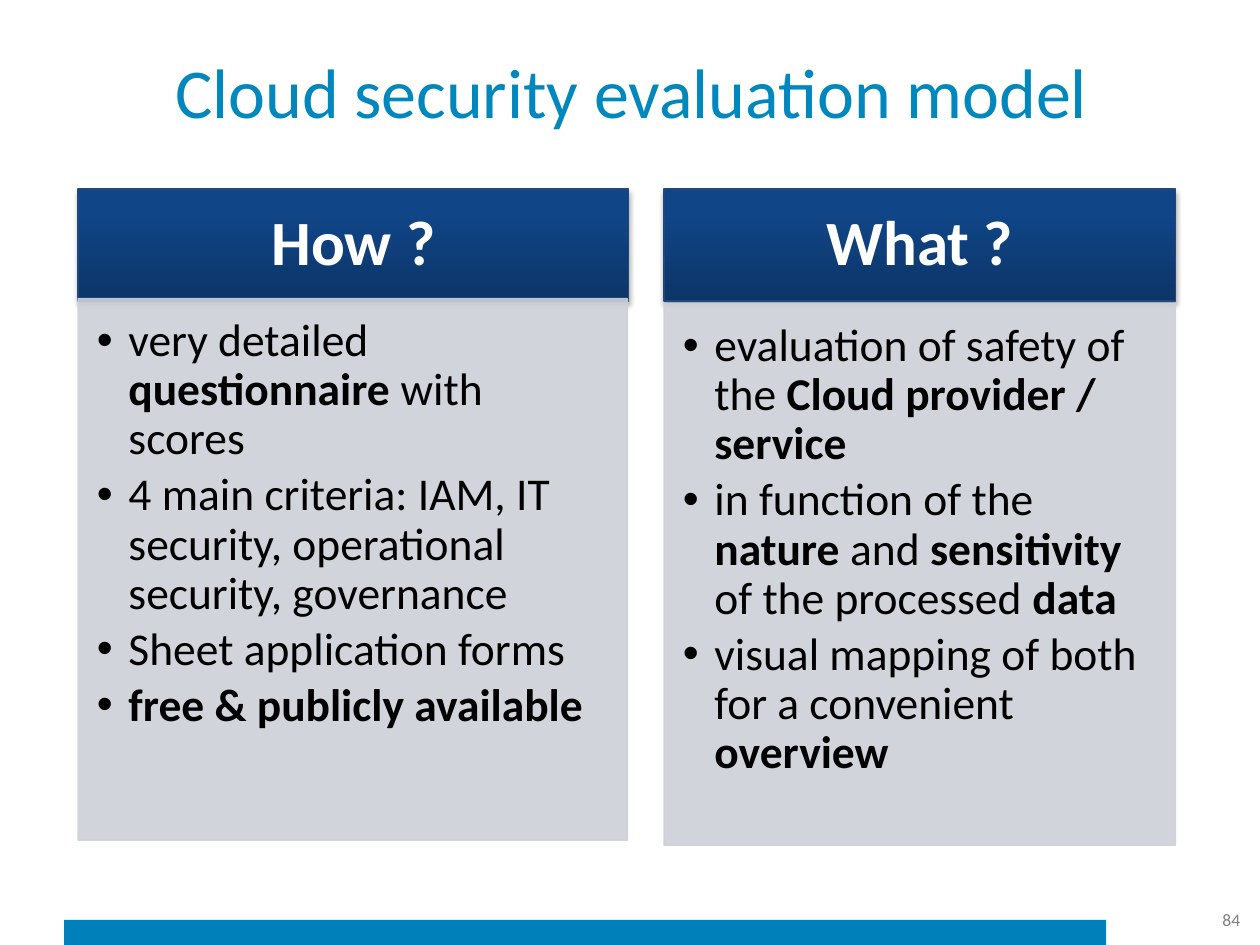
from copy import deepcopy
from dataclasses import dataclass

from lxml import etree
from pptx import Presentation
from pptx.dml.color import RGBColor
from pptx.enum.shapes import MSO_SHAPE
from pptx.enum.text import MSO_ANCHOR, PP_ALIGN
from pptx.oxml import parse_xml
from pptx.oxml.ns import nsdecls, qn
from pptx.util import Inches, Pt

RECT = MSO_SHAPE.RECTANGLE
TOP, MIDDLE = MSO_ANCHOR.TOP, MSO_ANCHOR.MIDDLE
LEFT, CENTER, RIGHT = PP_ALIGN.LEFT, PP_ALIGN.CENTER, PP_ALIGN.RIGHT


@dataclass(frozen=True)
class Theme:
    font: str = "Calibri"
    bar: str = "0080BB"
    title: str = "0087BE"
    number: str = "808080"
    header: str = "FFFFFF"
    header_line: str = "1F497D"
    gradient: tuple = ((0, "0D3568"), (0.8, "104587"), (1, "0E458A"))
    panel: str = "CDD0D7"
    body: str = "000000"
    title_size: int = 40
    header_size: int = 36
    body_size: int = 26
    number_size: int = 10


class SlideBuilder:
    def __init__(self, slide, theme):
        self.s = slide
        self.theme = theme

    def rect(self, box, line=None):
        sp = self.s.shapes.add_shape(RECT, *map(Inches, box))
        sp.shadow.inherit = False
        if line:
            sp.line.color.rgb = RGBColor.from_string(line)
            sp.line.width = Pt(0.75)
        else:
            sp.line.fill.background()
        return sp

    def solid(self, sp, color):
        sp.fill.solid()
        sp.fill.fore_color.rgb = RGBColor.from_string(color)

    def frame(self, sp, anchor, insets=(0.1, 0.05, 0.1, 0.05)):
        tf = sp.text_frame
        sides = ("margin_left", "margin_top", "margin_right", "margin_bottom")
        values = dict(zip(sides, map(Inches, insets)))
        values.update(word_wrap=True, vertical_anchor=anchor)
        for name, value in values.items():
            setattr(tf, name, value)
        return tf

    def run(self, p, text, size, color, bold=False):
        r = p.add_run()
        r.text = text
        values = {"name": self.theme.font, "size": Pt(size), "bold": bold}
        for name, value in values.items():
            setattr(r.font, name, value)
        r.font.color.rgb = RGBColor.from_string(color)

    def label(self, box, text, size, color, align):
        sp = self.s.shapes.add_textbox(*map(Inches, box))
        p = self.frame(sp, MIDDLE).paragraphs[0]
        p.alignment = align
        self.run(p, text, size, color)

    def bar(self, box):
        self.solid(self.rect(box), self.theme.bar)

    def header(self, box, text):
        t = self.theme
        sp = self.rect(box, t.header_line)
        sp.fill.gradient()
        sp.fill.gradient_angle = 90
        first = sp.fill.gradient_stops[0]._gs
        first.addnext(deepcopy(first))
        for stop, (position, color) in zip(sp.fill.gradient_stops, t.gradient):
            stop.position = position
            stop.color.rgb = RGBColor.from_string(color)
        sp._element.spPr.find(qn("a:effectLst")).append(parse_xml(
            f'<a:outerShdw {nsdecls("a")} blurRad="{Pt(3.1)}" dist="{Pt(1.8)}" '
            'dir="5400000" rotWithShape="0"><a:srgbClr val="000000">'
            '<a:alpha val="35000"/></a:srgbClr></a:outerShdw>'))
        p = self.frame(sp, MIDDLE, (0.28, 0.16, 0.28, 0.16)).paragraphs[0]
        p.alignment = CENTER
        p.line_spacing = 0.9
        self.run(p, text, t.header_size, t.header, True)

    def panel(self, box, items):
        """Draw a translucent panel; odd parts of each item are bold."""
        t = self.theme
        sp = self.rect(box, t.panel)
        self.solid(sp, t.panel)
        for color in sp._element.spPr.iter(qn("a:srgbClr")):
            etree.SubElement(color, qn("a:alpha"), val="90000")
        tf = self.frame(sp, TOP, (0.15, 0.15, 0.2, 0.23))
        for i, parts in enumerate(items):
            p = tf.add_paragraph() if i else tf.paragraphs[0]
            self.bullet(p)
            for j, text in enumerate(parts):
                if text:
                    self.run(p, text, t.body_size, t.body, j % 2 == 1)

    def bullet(self, p):
        pPr = p._p.get_or_add_pPr()
        pPr.set("marL", str(Inches(0.25)))
        pPr.set("indent", str(Inches(-0.25)))
        etree.SubElement(pPr, qn("a:buFont"), typeface="Arial")
        etree.SubElement(pPr, qn("a:buChar"), char="•")
        values = {"alignment": LEFT, "line_spacing": 0.9, "space_after": Pt(3.9)}
        for name, value in values.items():
            setattr(p, name, value)


# left, header width, panel width, panel top, heading, items
COLUMNS = (
    (5.27, 4.06, 4.06, 2.41, "What ?", (
        ("evaluation of safety of the ", "Cloud provider / service"),
        ("in function of the ", "nature", " and ", "sensitivity",
         " of the processed ", "data"),
        ("visual mapping of both for a convenient ", "overview"),
    )),
    (0.62, 4.37, 4.36, 2.37, "How ?", (
        ("very detailed ", "questionnaire", " with scores"),
        ("4 main criteria: IAM, IT security, operational security, governance",),
        ("Sheet application forms",),
        ("", "free & publicly available"),
    )),
)


def main():
    prs = Presentation()
    prs.slide_width, prs.slide_height = Inches(10), Inches(7.5)
    theme = Theme()
    b = SlideBuilder(prs.slides.add_slide(prs.slide_layouts[6]), theme)
    b.bar((0.51, 7.3, 8.27, 0.2))
    b.label((0.51, 0.21, 9, 1.01), "Cloud security evaluation model",
            theme.title_size, theme.title, CENTER)
    b.label((9.12, 7.1, 0.82, 0.4), "84", theme.number_size, theme.number, RIGHT)
    for left, header_width, panel_width, top, heading, items in COLUMNS:
        b.header((left, 1.5, header_width, 0.89), heading)
        b.panel((left, top, panel_width, 4.3), items)
    prs.save("out.pptx")


if __name__ == "__main__":
    main()
